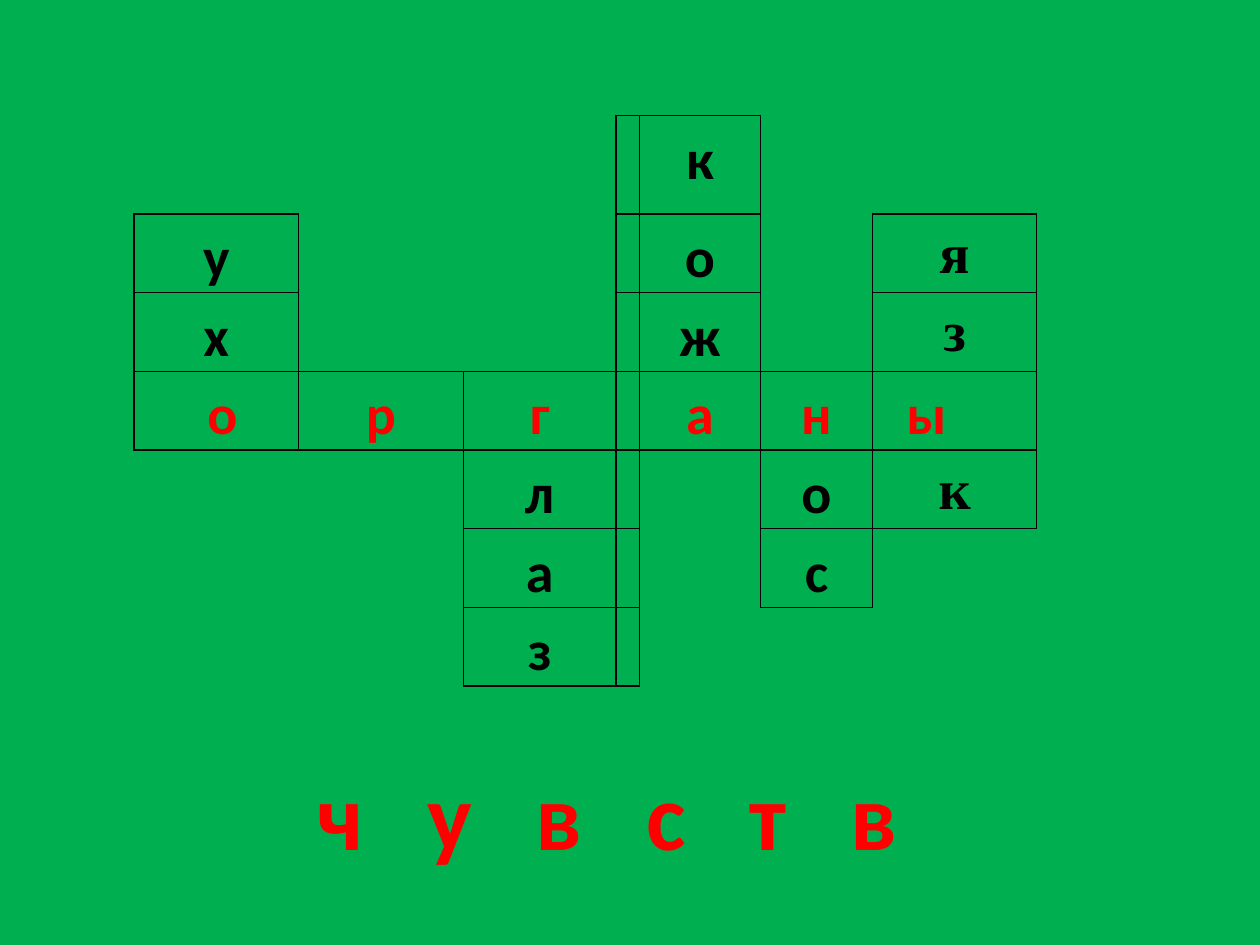
import pptx
import pptx.util
import pptx.dml.color
import pptx.enum.text
import pptx.oxml
import pptx.oxml.ns
from lxml import etree

Cm = pptx.util.Cm
Pt = pptx.util.Pt
CENTER = pptx.enum.text.PP_ALIGN.CENTER
LEFT = pptx.enum.text.PP_ALIGN.LEFT

GREEN, RED, BLACK = "00B050", "FF0000", "000000"
COLUMN_WIDTHS = [3.32, 3.32, 3.08, 0.47, 2.44, 2.26, 3.31]
ROW_HEIGHTS = [1.98] + [1.48] * 6
CROSSWORD = [
    "....к..",
    "у...о.я",
    "х...ж.з",
    "орг.аны",
    "..л..ок",
    "..а..с.",
    "..з....",
]
KEYWORD_ROW = 3
SPACER_COLUMN = 3
TONGUE_COLUMN = 6
SIDES = {"lnL": (0, -1), "lnR": (0, 1), "lnT": (-1, 0), "lnB": (1, 0)}
INDENTS = {(KEYWORD_ROW, 0): 0.43, (KEYWORD_ROW, TONGUE_COLUMN): 0.69}


def rgb(value):
    return pptx.dml.color.RGBColor.from_string(value)


def apply(target, values):
    for key, value in values.items():
        setattr(target, key, value)


def style_font(font, name, size, color):
    apply(font, {"name": name, "size": Pt(size), "bold": True})
    font.color.rgb = rgb(color)


def is_boxed(row, column):
    inside = 0 <= row < len(CROSSWORD) and 0 <= column < len(COLUMN_WIDTHS)
    return inside and (column == SPACER_COLUMN or CROSSWORD[row][column] != ".")


def add_border(cell, side, visible):
    properties = cell._tc.get_or_add_tcPr()
    border = etree.SubElement(properties, pptx.oxml.ns.qn("a:" + side), w=str(Pt(1)))
    if visible:
        fill = etree.SubElement(border, pptx.oxml.ns.qn("a:solidFill"))
        etree.SubElement(fill, pptx.oxml.ns.qn("a:srgbClr"), val=BLACK)
    else:
        etree.SubElement(border, pptx.oxml.ns.qn("a:noFill"))


def fill_cell(cell, row, column):
    apply(cell, {
        "margin_left": Cm(INDENTS.get((row, column), 0.18)),
        "margin_right": Cm(0.18),
        "margin_top": 0,
        "margin_bottom": 0,
    })
    for side, (down, across) in SIDES.items():
        visible = is_boxed(row, column) or is_boxed(row + down, column + across)
        add_border(cell, side, visible)
    cell.fill.background()
    letter = CROSSWORD[row][column]
    if letter == ".":
        return
    in_keyword = row == KEYWORD_ROW
    serif = column == TONGUE_COLUMN and not in_keyword
    paragraph = cell.text_frame.paragraphs[0]
    apply(paragraph, {
        "alignment": LEFT if in_keyword and column == TONGUE_COLUMN else CENTER,
        "line_spacing": 1.15,
    })
    run = paragraph.add_run()
    run.text = letter
    style_font(run.font, "Times New Roman" if serif else "Calibri", 32,
               RED if in_keyword else BLACK)


def add_crossword(slide):
    crossword = slide.shapes.add_table(
        len(ROW_HEIGHTS), len(COLUMN_WIDTHS), Cm(2.7), Cm(2.33),
        Cm(sum(COLUMN_WIDTHS)), Cm(sum(ROW_HEIGHTS))).table
    apply(crossword, {"first_row": False, "horz_banding": False})
    for column, width in zip(crossword.columns, COLUMN_WIDTHS):
        column.width = Cm(width)
    for row, height in zip(crossword.rows, ROW_HEIGHTS):
        row.height = Cm(height)
    for row in range(len(ROW_HEIGHTS)):
        for column in range(len(COLUMN_WIDTHS)):
            fill_cell(crossword.cell(row, column), row, column)


def add_second_word(slide):
    frame = slide.shapes.add_textbox(Cm(2.84), Cm(15.11), Cm(18.39), Cm(2.57)).text_frame
    apply(frame, {"word_wrap": True, "margin_left": Cm(0.68)})
    paragraph = frame.paragraphs[0]
    paragraph.alignment = CENTER
    run = paragraph.add_run()
    run.text = "ч у в с т в"
    style_font(run.font, "Calibri", 54, RED)
    run._r.get_or_add_rPr().set("spc", "1220")


def main():
    deck = pptx.Presentation()
    apply(deck, {"slide_width": Cm(25.4), "slide_height": Cm(19.05)})
    slide = deck.slides.add_slide(deck.slide_layouts[6])
    slide.background.fill.solid()
    slide.background.fill.fore_color.rgb = rgb(GREEN)
    add_crossword(slide)
    add_second_word(slide)
    deck.save("out.pptx")


if __name__ == "__main__":
    main()
